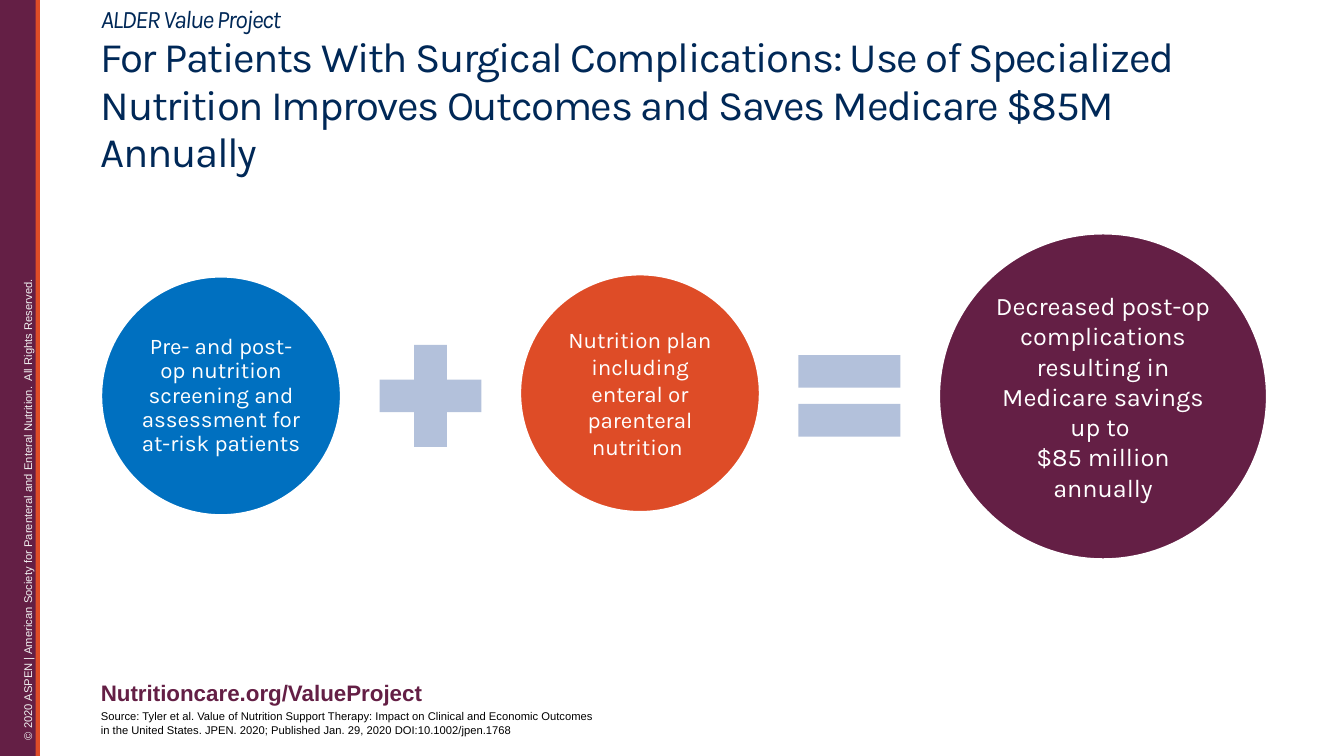
from pptx import Presentation
from pptx.dml.color import RGBColor
from pptx.enum.shapes import MSO_SHAPE as Shape
from pptx.enum.text import MSO_ANCHOR as Anchor, MSO_AUTO_SIZE as AutoSize, PP_ALIGN as Align
from pptx.util import Pt

PX = 9525
COLORS = {
    "plum": "641F45", "orange": "DE4C27", "blue": "0070C0", "navy": "002857",
    "operator": "B3C1DB", "white": "FFFFFF", "pale": "F2F2F2", "black": "000000",
}


def color(name):
    return RGBColor.from_string(COLORS[name])


def emu(*lengths):
    return [length * PX for length in lengths]


def set_frame(frame, inset, anchor=Anchor.TOP, wrap=True):
    frame.margin_left = frame.margin_right = inset * PX
    frame.margin_top = frame.margin_bottom = inset * PX
    frame.vertical_anchor = anchor
    frame.auto_size = AutoSize.NONE
    frame.word_wrap = wrap


def set_font(paragraph, face, size, tint, bold=False):
    font = paragraph.font
    font.name, font.size, font.bold = face, Pt(size), bold
    font.color.rgb = color(tint)


def add_filled(slide, kind, box, tint):
    shape = slide.shapes.add_shape(kind, *emu(*box))
    shape.shadow.inherit = False
    shape.fill.solid()
    shape.fill.fore_color.rgb = color(tint)
    shape.line.fill.background()
    return shape


def add_label(slide, box, text, size, tint, bold=False, inset=0, wrap=True):
    label = slide.shapes.add_textbox(*emu(*box))
    set_frame(label.text_frame, inset, wrap=wrap)
    paragraph = label.text_frame.paragraphs[0]
    paragraph.text = text
    set_font(paragraph, "Arial", size, tint, bold)
    return label


def add_sidebar(slide, left, top, width, height):
    stripe = 4
    add_filled(slide, Shape.RECTANGLE, (left, top, width, height), "plum")
    length, thickness = 613, 23
    center_x, center_y = left + 26, top + 408
    copyright_line = add_label(
        slide, (center_x - length // 2, center_y - thickness // 2, length, thickness),
        "© 2020 ASPEN | American Society for Parenteral and Enteral Nutrition.  All Rights Reserved.",
        8, "pale", inset=5)
    copyright_line.text_frame.margin_left = 10 * PX
    copyright_line.rotation = 270
    add_filled(slide, Shape.RECTANGLE, (left + width - stripe, top, stripe, height), "orange")


def add_heading(slide, left, top, width, height):
    title = slide.shapes.title
    title.left, title.top, title.width, title.height = emu(left, top, width, height)
    set_frame(title.text_frame, 0, Anchor.MIDDLE)
    paragraph = title.text_frame.paragraphs[0]
    paragraph.alignment = Align.LEFT
    paragraph.line_spacing = 0.95
    set_font(paragraph, "Karla", 30, "navy")
    project = paragraph.add_run()
    project.text = "ALDER Value Project"
    project.font.size, project.font.italic = Pt(18), True
    paragraph.add_line_break()
    claim = paragraph.add_run()
    claim.text = ("For Patients With Surgical Complications: Use of Specialized Nutrition "
                  "Improves Outcomes and Saves Medicare $85M Annually")
    for run in (project, claim):
        run.font._element.set("spc", "-100")


def add_circle(slide, box, text, tint, size, inset, spacing):
    circle = add_filled(slide, Shape.OVAL, box, tint)
    circle.line.color.rgb = color("white")
    circle.line.width = Pt(2)
    set_frame(circle.text_frame, inset, Anchor.MIDDLE)
    paragraph = circle.text_frame.paragraphs[0]
    paragraph.text = text
    paragraph.alignment = Align.CENTER
    paragraph.line_spacing = spacing
    set_font(paragraph, "Karla", size, "white")


def add_equation(slide, left, top, width, height):
    gap, operator_side, small, large = 19, 132, 229, 313
    middle = top + height // 2
    terms = [
        ("Pre- and post-op nutrition screening and assessment for at-risk patients",
         "blue", small, 228, 0, 16, 2, 0.9, Shape.MATH_PLUS),
        ("Nutrition plan including enteral or parenteral nutrition ",
         "orange", small, 227, -3, 16, 2, 1.0, Shape.MATH_EQUAL),
        ("Decreased post-op complications resulting in Medicare savings up to \v$85 million annually",
         "plum", large, height, 0, 18, 3, 1.0, None),
    ]
    x = left
    for text, tint, across, tall, shift, size, inset, spacing, operator in terms:
        box = (x, middle - tall // 2 + shift, across, tall)
        add_circle(slide, box, text, tint, size, inset, spacing)
        x += across + gap
        if operator is not None:
            box = (x, middle - operator_side // 2, operator_side, operator_side)
            add_filled(slide, operator, box, "operator")
            x += operator_side + gap


def add_footer(slide, left, top, width, height):
    row = 26
    add_label(slide, (left, top + height - row, width, row),
              "Source: Tyler et al. Value of Nutrition Support Therapy: Impact on Clinical and Economic "
              "Outcomes in the United States. JPEN. 2020; Published Jan. 29, 2020 DOI:10.1002/jpen.1768",
              8, "black")
    add_label(slide, (left, top, width, row), "Nutritioncare.org/ValueProject", 16, "plum", bold=True)


def main():
    deck = Presentation()
    deck.slide_width, deck.slide_height = emu(1280, 720)
    slide = deck.slides.add_slide(deck.slide_layouts[5])
    add_sidebar(slide, 0, 0, 38, 720)
    add_heading(slide, 96, 13, 1088, 148)
    add_equation(slide, 96, 222, 1111, 311)
    add_footer(slide, 96, 647, 470, 55)
    deck.save("out.pptx")


if __name__ == "__main__":
    main()
